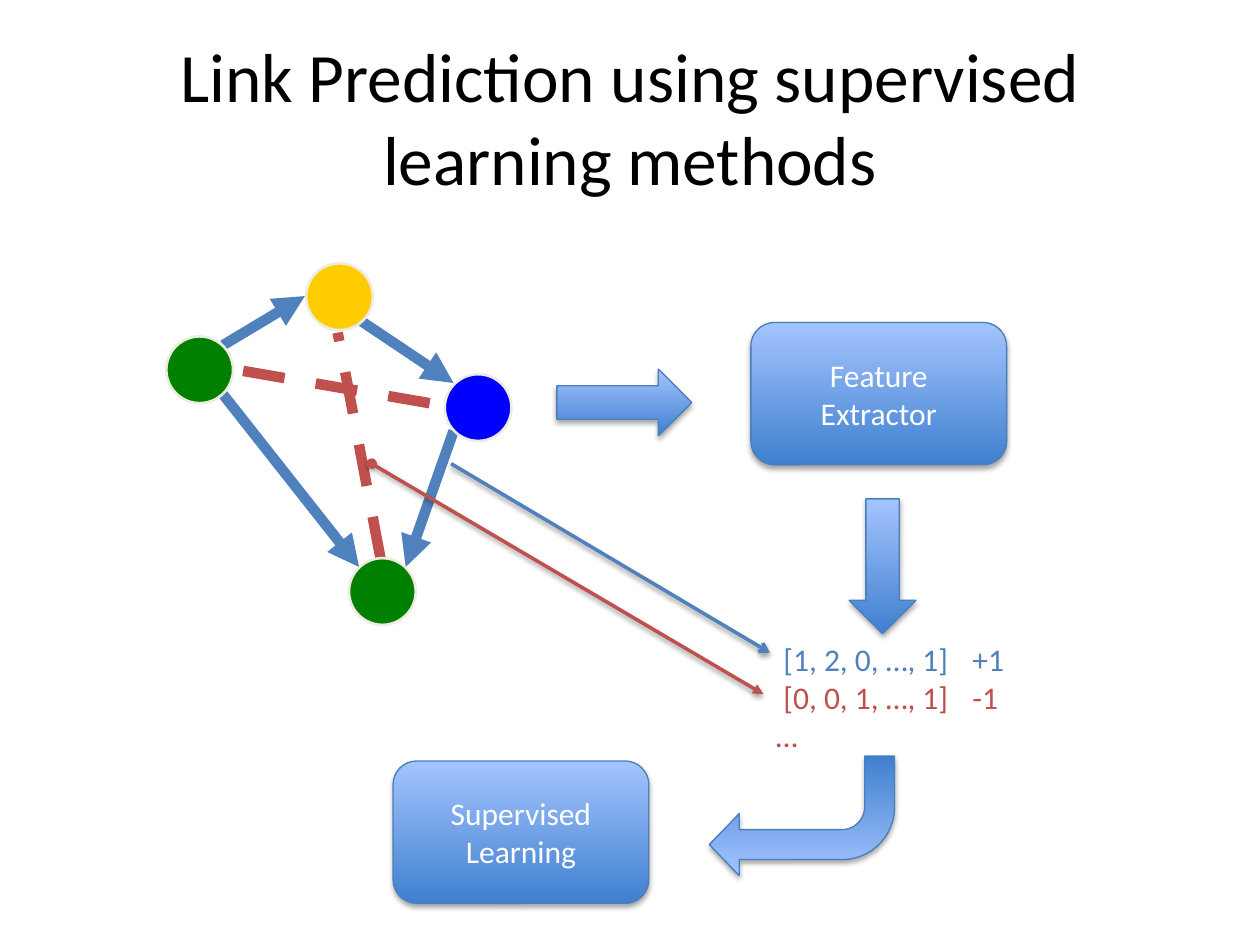
from lxml import etree
from pptx import Presentation
from pptx.dml.color import RGBColor
from pptx.enum.dml import MSO_LINE
from pptx.enum.shapes import MSO_CONNECTOR, MSO_SHAPE
from pptx.enum.text import MSO_ANCHOR, MSO_AUTO_SIZE, PP_ALIGN
from pptx.oxml.ns import qn
from pptx.util import Inches, Pt

COLORS = {
    "black": "000000", "white": "FFFFFF", "blue": "4F81BD", "red": "C0504D",
    "grad_dark": "3F80CE", "grad_light": "A4C4FF", "outline": "4B7EBC",
    "node_line": "EEECE1", "node_blue": "0000FF", "node_green": "008000",
    "node_yellow": "FFCC00",
}


def rgb(name):
    return RGBColor.from_string(COLORS[name])


def add_text(p, text, size=18, color="black", font="Calibri", align=None):
    p.alignment = align
    r = p.add_run()
    r.text = text
    r.font.size, r.font.name = Pt(size), font
    r.font.color.rgb = rgb(color)


def set_effect(shape, alpha=None, dist=1.8):
    """Give the shape a soft drop shadow, or none without alpha."""
    effects = etree.SubElement(shape._element.spPr, qn("a:effectLst"))
    if alpha:
        shadow = etree.SubElement(
            effects, qn("a:outerShdw"), blurRad=str(Pt(3.1)),
            dist=str(Pt(dist)), dir="5400000", rotWithShape="0")
        clr = etree.SubElement(shadow, qn("a:srgbClr"), val=COLORS["black"])
        etree.SubElement(clr, qn("a:alpha"), val=str(alpha * 1000))


class SlideBuilder:
    NODE = 0.53

    def __init__(self, s):
        self.s = s

    def title(self, text, *box):
        sp = self.s.shapes.title
        sp.left, sp.top, sp.width, sp.height = map(Inches, box)
        tf = sp.text_frame
        tf.auto_size = MSO_AUTO_SIZE.NONE
        tf.vertical_anchor = MSO_ANCHOR.MIDDLE
        add_text(tf.paragraphs[0], text, size=39.6, align=PP_ALIGN.CENTER)

    def line(self, start, end, color, width, head=None, tail=None,
             dashed=False, shadow=None):
        sp = self.s.shapes.add_connector(
            MSO_CONNECTOR.STRAIGHT, *map(Inches, start + end))
        sp.line.color.rgb, sp.line.width = rgb(color), Pt(width)
        if dashed:
            sp.line.dash_style = MSO_LINE.DASH
        ln = sp.line._get_or_add_ln()
        for tag, kind in (("a:headEnd", head), ("a:tailEnd", tail)):
            if kind:
                etree.SubElement(ln, qn(tag), type=kind)
        set_effect(sp, shadow, dist=1.6)

    def node(self, x, y, color):
        sp = self.s.shapes.add_shape(
            MSO_SHAPE.OVAL, *map(Inches, (x, y, self.NODE, self.NODE)))
        sp.fill.solid()
        sp.fill.fore_color.rgb = rgb(color)
        sp.line.color.rgb, sp.line.width = rgb("node_line"), Pt(1.5)
        set_effect(sp)

    def block(self, kind, *box, text=None, rotation=0, adjustments=()):
        sp = self.s.shapes.add_shape(kind, *map(Inches, box))
        sp.rotation = rotation
        for i, value in enumerate(adjustments):
            sp.adjustments[i] = value
        sp.fill.gradient()
        sp.fill.gradient_angle = 90
        for stop, name in zip(sp.fill.gradient_stops, ("grad_dark", "grad_light")):
            stop.color.rgb = rgb(name)
        sp.line.color.rgb, sp.line.width = rgb("outline"), Pt(0.75)
        set_effect(sp, 35)
        if text:
            tf = sp.text_frame
            tf.word_wrap, tf.vertical_anchor = True, MSO_ANCHOR.MIDDLE
            add_text(tf.paragraphs[0], text, color="white", align=PP_ALIGN.CENTER)

    def vectors(self, rows, *box, indent=0.06, label_end=1.95):
        """Rows of a vector and a label that ends at a right tab stop."""
        tf = self.s.shapes.add_textbox(*map(Inches, box)).text_frame
        tf.word_wrap = True
        for i, (vector, label, color) in enumerate(rows):
            p = tf.add_paragraph() if i else tf.paragraphs[0]
            add_text(p, f"{vector}\t{label}" if label else vector, color=color)
            if label:
                pPr = p._p.get_or_add_pPr()
                pPr.set("marL", str(Inches(indent)))
                pPr.set("indent", "0")
                tabs = etree.SubElement(pPr, qn("a:tabLst"))
                etree.SubElement(tabs, qn("a:tab"), algn="r",
                                 pos=str(Inches(label_end)))


def main():
    prs = Presentation()
    prs.slide_width, prs.slide_height = Inches(10), Inches(7.5)
    b = SlideBuilder(prs.slides.add_slide(prs.slide_layouts[5]))
    b.title("Link Prediction using supervised learning methods", 0.5, 0.3, 9, 1.25)

    # Graph: known links, a missing link, then the nodes on top
    for start, end in (
        ((1.77, 3.13), (2.85, 4.5)),
        ((3.6, 3.42), (3.22, 4.5)),
        ((1.77, 2.74), (2.42, 2.35)),
        ((2.87, 2.55), (3.6, 3.04)),
    ):
        b.line(start, end, "blue", 6, tail="triangle")
    b.line((3.02, 4.43), (2.68, 2.64), "red", 6, dashed=True)
    for x, y, color in (
        (3.53, 2.97, "node_blue"), (2.77, 4.43, "node_green"),
        (1.32, 2.67, "node_green"), (2.43, 2.09, "node_yellow"),
    ):
        b.node(x, y, color)
    b.line((3.41, 3.2), (1.85, 2.93), "red", 6, dashed=True)

    # Feature extraction
    b.block(MSO_SHAPE.RIGHT_ARROW, 4.42, 2.93, 1.07, 0.53)
    b.block(MSO_SHAPE.ROUNDED_RECTANGLE, 5.96, 2.56, 2.03, 1.13,
            text="Feature Extractor")
    b.block(MSO_SHAPE.DOWN_ARROW, 6.74, 3.96, 0.53, 1.07)

    # Labelled vectors and the links they come from
    b.vectors((("[1, 2, 0, …, 1]", "+1", "blue"),
               ("[0, 0, 1, …, 1]", "-1", "red"),
               ("…", None, "red")), 6.06, 5.03, 2.18, 1.01)
    b.line((3.58, 3.68), (6.11, 5.18), "blue", 2, tail="arrow", shadow=38)
    b.line((2.95, 3.68), (6.06, 5.51), "red", 2, head="oval", tail="triangle",
           shadow=38)

    # Learning step
    b.block(MSO_SHAPE.ROUNDED_RECTANGLE, 3.12, 6.04, 2.03, 1.13,
            text="Supervised Learning")
    b.block(MSO_SHAPE.BENT_ARROW, 5.63, 6, 1.47, 0.95, rotation=180,
            adjustments=(0.25, 0.26, 0.25, 0.44))
    prs.save("out.pptx")


if __name__ == "__main__":
    main()
